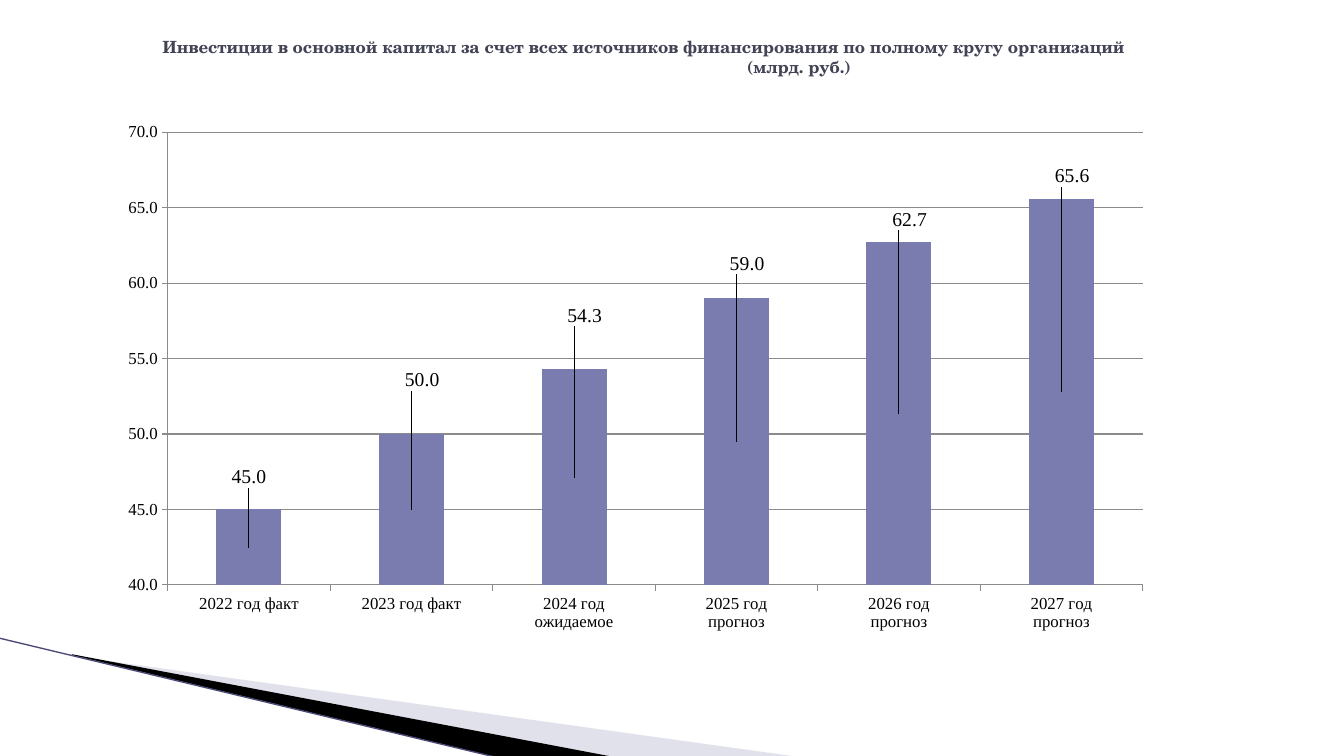
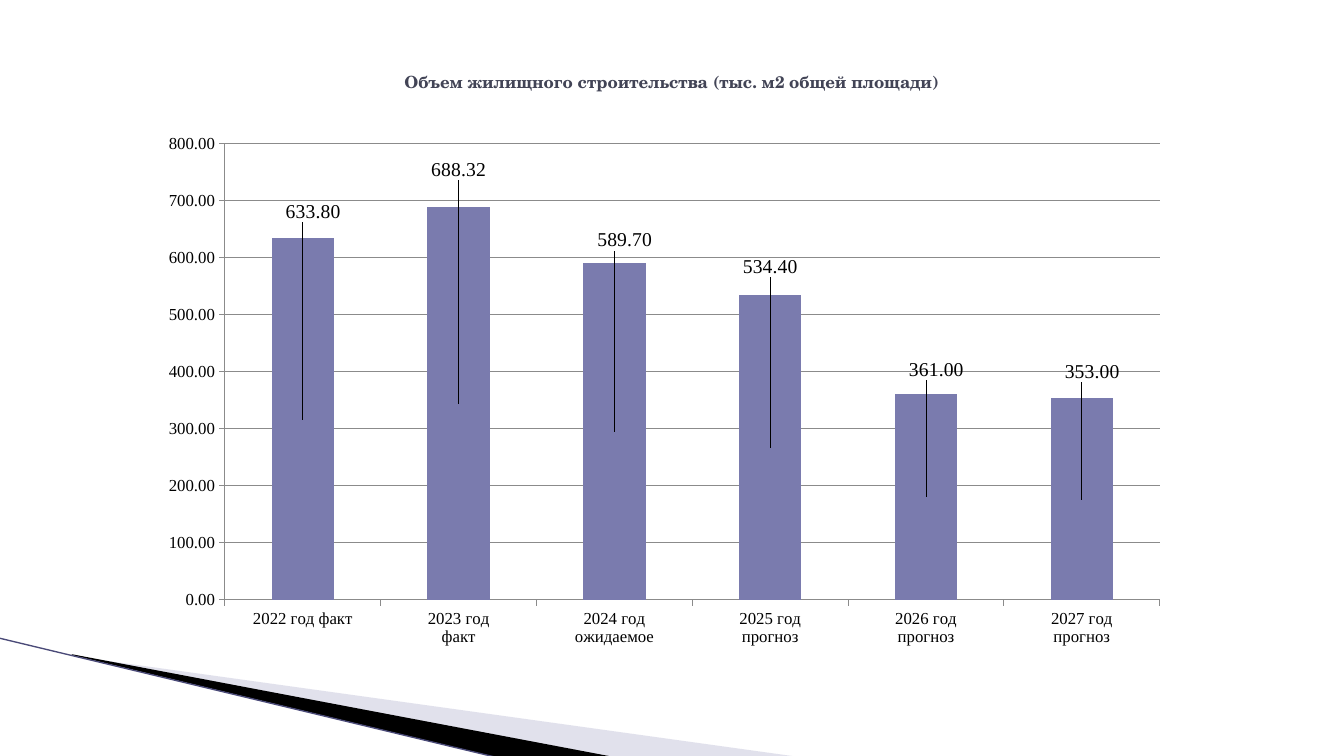
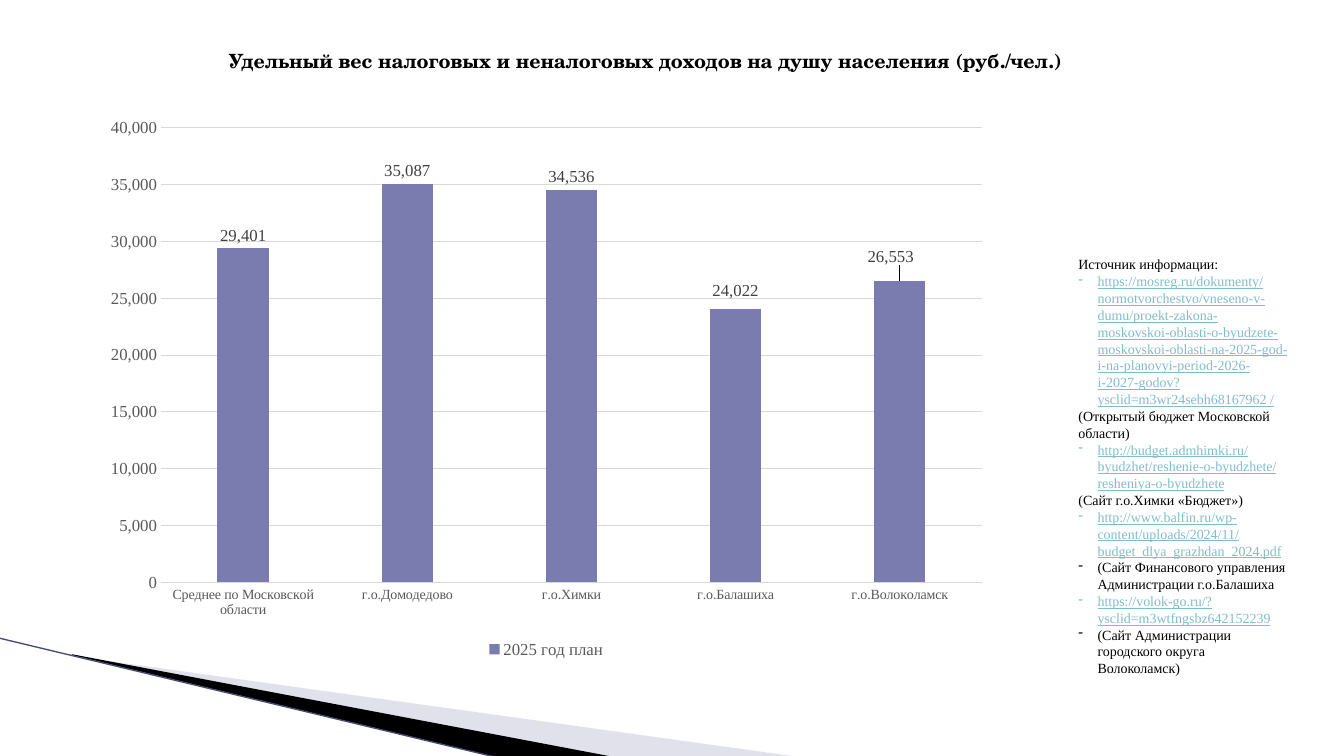
from lxml import etree
from pptx import Presentation
from pptx import util as u
from pptx.chart import data as chart_data
from pptx.dml import color as dml
from pptx.enum import chart as ce
from pptx.enum import text as te
from pptx.enum import shapes as se
from pptx.oxml import ns

PX = 9144


def px(length):
    return u.Emu(length * PX)


def rgb(code):
    return dml.RGBColor.from_string(code)


def child(parent, tag, **attributes):
    return etree.SubElement(parent, ns.qn(tag), attributes)


def set_layout(parent, index, **values):
    layout = etree.Element(ns.qn("c:layout"))
    manual = child(layout, "c:manualLayout")
    for name, value in values.items():
        child(manual, "c:" + name, val=str(value))
    parent.insert(index, layout)


class Report:
    HEADING = "TeX Gyre Schola"
    BODY = "Times New Roman"
    TITLE = "424456"
    BLACK = "000000"
    BAR = "7A7BAE"
    PALE = "B6B6D1"
    EDGE = "4A4A78"
    AXIS = "8B8B8B"
    GRID = "D9D9D9"
    TICK = "595959"
    VALUE = "404040"
    LINK = "81BDC9"

    def __init__(self):
        self.deck = Presentation()
        self.deck.slide_width, self.deck.slide_height = u.Inches(13.333), px(750)
        self.layout = self.deck.slide_layouts[5]
        self.page = None

    def style(self, font, size, color, name=BODY, bold=False):
        font.name, font.size, font.bold = name, u.Pt(size), bold
        font.color.rgb = rgb(color)

    def add_page(self):
        self.page = self.deck.slides.add_slide(self.layout)

    def to_layout(self, shape, order):
        self.layout.shapes.element.insert(2 + order, shape.element)

    def wedge(self, points, color, alpha=None):
        builder = self.page.shapes.build_freeform(*points[0], scale=PX)
        builder.add_line_segments(points[1:], close=True)
        shape = builder.convert_to_shape()
        shape.shadow.inherit = False
        shape.fill.solid()
        shape.fill.fore_color.rgb = rgb(color)
        shape.line.fill.background()
        if alpha:
            for fill in shape.element.spPr.iter(ns.qn("a:srgbClr")):
                child(fill, "a:alpha", val=str(alpha * 1000))
        return shape

    def line(self, start, end, color, width):
        ends = [px(value) for value in (*start, *end)]
        line = self.page.shapes.add_connector(se.MSO_CONNECTOR.STRAIGHT, *ends)
        line.line.color.rgb = rgb(color)
        line.line.width = u.Pt(width)
        child(line.element.spPr, "a:effectLst")
        return line

    def bands(self):
        pale = self.wedge([(73, 651), (793, 751), (608, 751), (73, 650)], self.PALE, 40)
        dark = self.wedge([(71, 649), (609, 751), (496, 752), (72, 650)], self.BLACK)
        edge = self.line((-1, 633), (495, 752), self.EDGE, 0.95)
        for order, shape in enumerate((pale, dark, edge)):
            self.to_layout(shape, order)

    def title(self, lines, place, size=12, color=TITLE, align=te.PP_ALIGN.LEFT, margins=(0,)):
        box = self.page.shapes.title
        box.left, box.top, box.width, box.height = map(px, place)
        frame = box.text_frame
        frame.text = "\n".join(lines)
        frame.auto_size = te.MSO_AUTO_SIZE.NONE
        frame.vertical_anchor = te.MSO_ANCHOR.MIDDLE
        for para, margin in zip(frame.paragraphs, margins):
            para.alignment = align
            para._p.get_or_add_pPr().set("marL", str(px(margin)))
            self.style(para.font, size, color, self.HEADING, True)

    def sources(self, entries, place):
        box = self.page.shapes.add_textbox(*map(px, place))
        frame = box.text_frame
        frame.word_wrap = True
        frame.auto_size = te.MSO_AUTO_SIZE.SHAPE_TO_FIT_TEXT
        frame.text = "\n".join(text for _, text in entries)
        for para, (bullet, text) in zip(frame.paragraphs, entries):
            if bullet:
                props = para._p.get_or_add_pPr()
                props.set("marL", str(px(19)))
                props.set("indent", str(px(-19)))
                child(props, "a:buChar", char=bullet)
            link = text.startswith("http")
            self.style(para.font, 10, self.LINK if link else self.BLACK)
            para.font.underline = link

    def chart(self, place, name, values, fmt, scale, offsets, stacked=True, plot_area=None):
        data = chart_data.CategoryChartData(number_format=fmt)
        data.categories = list(values)
        data.add_series(name, list(values.values()))
        kinds = ce.XL_CHART_TYPE
        kind = kinds.COLUMN_STACKED if stacked else kinds.COLUMN_CLUSTERED
        chart = self.page.shapes.add_chart(kind, *map(px, place), data).chart
        ink = self.BLACK if stacked else self.TICK
        self.style(chart.font, 12, ink)
        chart.has_title = False
        chart.has_legend = not stacked
        if chart.has_legend:
            chart.legend.position = ce.XL_LEGEND_POSITION.BOTTOM
            chart.legend.include_in_layout = False
            self.style(chart.legend.font, 12, ink)
        self.axes(chart, fmt, scale, stacked, ink)

        plot = chart.plots[0]
        plot.vary_by_categories = False
        plot.gap_width, plot.overlap = (150, 100) if stacked else (219, -27)
        series = plot.series[0]
        series.format.fill.solid()
        series.format.fill.fore_color.rgb = rgb(self.BAR)
        self.labels(chart, series, fmt, offsets, stacked)
        if plot_area:
            x, y, w, h = plot_area
            area = chart.element.find(".//" + ns.qn("c:plotArea"))
            for old in area.findall(ns.qn("c:layout")):
                area.remove(old)
            set_layout(area, 0, layoutTarget="inner", xMode="edge", yMode="edge", x=x, y=y, w=w, h=h)

    def axes(self, chart, fmt, scale, stacked, ink):
        color = self.AXIS if stacked else self.GRID
        marks = ce.XL_TICK_MARK
        value_axis, category_axis = chart.value_axis, chart.category_axis
        value_axis.minimum_scale, value_axis.maximum_scale, value_axis.major_unit = scale
        value_axis.has_major_gridlines = True
        value_axis.tick_labels.number_format = fmt
        value_axis.tick_labels.number_format_is_linked = False
        lines = [value_axis.major_gridlines.format.line]
        for axis, size in ((value_axis, 12), (category_axis, 12 if stacked else 10)):
            axis.major_tick_mark = marks.OUTSIDE if stacked else marks.NONE
            axis.minor_tick_mark = marks.NONE
            self.style(axis.tick_labels.font, size, ink)
            lines.append(axis.format.line)
        for line in lines:
            line.color.rgb = rgb(color)
            line.width = u.Pt(0.75)
        if not stacked:
            value_axis.format.line.fill.background()

    def labels(self, chart, series, fmt, offsets, stacked):
        spots = ce.XL_LABEL_POSITION
        spot = spots.CENTER if stacked else spots.OUTSIDE_END
        size, color = (14, self.BLACK) if stacked else (12, self.VALUE)
        labels = series.data_labels
        labels.show_value = True
        labels.number_format, labels.number_format_is_linked = fmt, False
        labels.position = spot
        self.style(labels.font, size, color)
        for index in offsets:
            label = series.points[index].data_label
            self.style(label.font, size, color)
            label.position = spot
        nodes = chart.element.iter(ns.qn("c:dLbl"))
        for node, (x, y) in zip(list(nodes), offsets.values()):
            set_layout(node, 1, x=x, y=y)


def main():
    report = Report()

    report.add_page()
    report.bands()
    report.title(
        ["Инвестиции в основной капитал за счет всех источников финансирования по полному кругу организаций",
         "(млрд. руб.)"],
        (115, 29, 1158, 55), margins=(36, 616))
    investment = {
        "2022 год факт": 45, "2023 год факт": 50, "2024 год\nожидаемое": 54.3,
        "2025 год\nпрогноз": 59, "2026 год\nпрогноз": 62.7, "2027 год\nпрогноз": 65.6}
    report.chart(
        (92, 115, 1063, 535), "Series 1", investment, "#,##0.0", (40, 70, 5),
        {0: (0, -0.13), 1: (0.01, -0.24), 2: (0.01, -0.3),
         3: (0.01, -0.33), 4: (0.01, -0.36), 5: (0.01, -0.4)},
        plot_area=(0.07, 0.03, 0.91, 0.84))

    report.add_page()
    report.title(["Объем жилищного строительства (тыс. м2 общей площади)"],
                 (329, 52, 675, 58), align=te.PP_ALIGN.CENTER)
    housing = {
        "2022 год факт": 633.8, "2023 год\nфакт": 688.32, "2024 год\nожидаемое": 589.7,
        "2025 год\nпрогноз": 534.4, "2026 год\nпрогноз": 361, "2027 год\nпрогноз": 353}
    report.chart(
        (147, 123, 1024, 528), "Series 1", housing, "#,##0.00", (0, 800, 100),
        {0: (0.01, -0.39), 1: (0, -0.44), 2: (0.01, -0.36),
         3: (0, -0.34), 4: (0.01, -0.24), 5: (0.01, -0.24)})

    report.add_page()
    report.title(["Удельный вес налоговых и неналоговых доходов на душу населения (руб./чел.)"],
                 (217, 30, 900, 61), size=14, color=report.BLACK)
    income = {
        "Среднее по Московской области": 29401, "г.о.Домодедово": 35087, "г.о.Химки": 34536,
        "г.о.Балашиха": 24022, "г.о.Волоколамск": 26553}
    report.chart(
        (92, 107, 900, 550), "2025 год план", income, "#,##0", (0, 40000, 5000),
        {3: (0, -0.01), 4: (-0.01, -0.02)}, stacked=False)
    report.sources([
        ("", "Источник информации:"),
        ("-", "https://mosreg.ru/dokumenty/normotvorchestvo/vneseno-v-dumu/"
              "proekt-zakona-moskovskoi-oblasti-o-byudzete-moskovskoi-oblasti-na-2025-god-"
              "i-na-planovyi-period-2026-i-2027-godov?ysclid=m3wr24sebh68167962 /"),
        ("", "(Открытый бюджет Московской области)"),
        ("-", "http://budget.admhimki.ru/byudzhet/reshenie-o-byudzhete/resheniya-o-byudzhete"),
        ("", "(Сайт г.о.Химки «Бюджет»)"),
        ("-", "http://www.balfin.ru/wp-content/uploads/2024/11/budget_dlya_grazhdan_2024.pdf"),
        ("-", "(Сайт Финансового управления Администрации г.о.Балашиха"),
        ("-", "https://volok-go.ru/?ysclid=m3wtfngsbz642152239"),
        ("-", "(Сайт Администрации городского округа Волоколамск)"),
    ], (1060, 249, 228, 481))

    report.deck.save("out.pptx")


if __name__ == "__main__":
    main()
